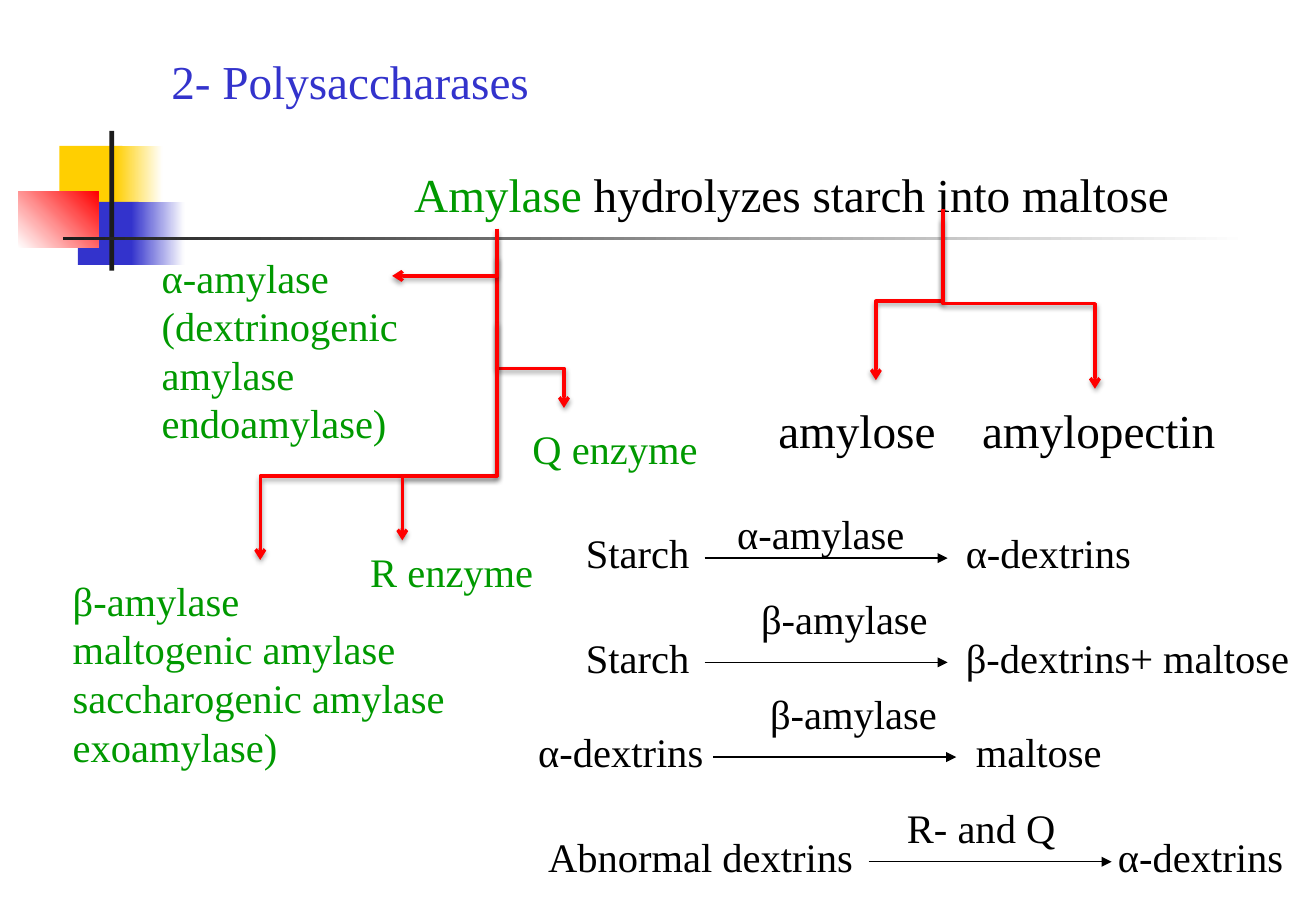
from lxml import etree
from pptx import Presentation
from pptx.dml.color import RGBColor
from pptx.enum.shapes import MSO_CONNECTOR, MSO_SHAPE
from pptx.enum.text import MSO_ANCHOR, MSO_AUTO_SIZE, PP_ALIGN
from pptx.oxml.ns import qn
from pptx.util import Cm, Pt

RECTANGLE = MSO_SHAPE.RECTANGLE
STRAIGHT, ELBOW = MSO_CONNECTOR.STRAIGHT, MSO_CONNECTOR.ELBOW
TOP, LEFT, NO_AUTOFIT = MSO_ANCHOR.TOP, PP_ALIGN.LEFT, MSO_AUTO_SIZE.NONE

FONT = "Times New Roman"
BLACK = RGBColor(0x00, 0x00, 0x00)
WHITE = RGBColor(0xFF, 0xFF, 0xFF)
CHARCOAL = RGBColor(0x1C, 0x1C, 0x1C)
YELLOW = RGBColor(0xFF, 0xCF, 0x01)
BLUE = RGBColor(0x33, 0x33, 0xCC)
RED = RGBColor(0xFF, 0x00, 0x00)
GREEN = RGBColor(0x00, 0x99, 0x00)

# Left, top, width, height in cm, one or two gradient colours, angle
DECORATION = [
    (1.24, 3.05, 1.32, 1.32, [YELLOW], 0),
    (2.41, 3.05, 0.99, 1.32, [YELLOW, WHITE], 0),
    (1.63, 4.22, 1.27, 1.32, [BLUE], 0),
    (2.74, 4.22, 1.12, 1.32, [BLUE, WHITE], 0),
    (0.38, 4.01, 1.68, 1.17, [WHITE, RED], 45),
    (2.29, 2.74, 0.1, 2.92, [CHARCOAL], 0),
    (1.32, 4.95, 24.77, 0.08, [CHARCOAL, WHITE], 0),
]

STEM = 10.39
STARCH = 19.71
# Start, end, height of the bend in cm
BRANCHES = [
    ((STARCH, 4.37), (18.31, 7.95), 6.3),
    ((STARCH, 4.57), (22.89, 8.13), 6.35),
    ((STEM, 4.78), (11.79, 8.53), 7.7),
    ((STEM, 5.36), (5.44, 11.71), 9.96),
    ((STEM, 6.76), (8.41, 11.3), 9.96),
]

# Row top, arrow left, then text and left of substrate and product,
# and text, left and top of the enzyme
REACTIONS = [
    (11.05, 14.73, ("Starch", 12.25), ("α-dextrins", 20.19),
     ("α-amylase", 15.41, 10.64)),
    (13.23, 14.73, ("Starch", 12.25), ("β-dextrins+ maltose", 20.19),
     ("β-amylase", 15.91, 12.42)),
    (15.21, 14.91, ("α-dextrins", 11.25), ("maltose", 20.4),
     ("β-amylase", 16.1, 14.4)),
    (17.4, 18.16, ("Abnormal dextrins", 11.46), ("α-dextrins", 23.37),
     ("R- and Q", 18.96, 16.79)),
]


def write_text(shape, paragraphs, size=24, wrap=True):
    """Each paragraph is a list of (text, colour) runs."""
    frame = shape.text_frame
    frame.word_wrap = wrap
    frame.auto_size = NO_AUTOFIT
    frame.vertical_anchor = TOP
    frame.margin_left = frame.margin_right = Cm(0)
    frame.margin_top = frame.margin_bottom = Cm(0)
    for index, runs in enumerate(paragraphs):
        paragraph = frame.add_paragraph() if index else frame.paragraphs[0]
        paragraph.alignment = LEFT
        paragraph.space_before = Pt(0)
        properties = paragraph._p.get_or_add_pPr()
        properties.set("marL", "0")
        properties.set("indent", "0")
        etree.SubElement(properties, qn("a:buNone"))
        for text, colour in runs:
            run = paragraph.add_run()
            run.text = text
            run.font.name = FONT
            run.font.size = Pt(size)
            run.font.color.rgb = colour


def add_label(slide, text, left, top, colour=BLACK, size=24):
    box = slide.shapes.add_textbox(Cm(left), Cm(top), Cm(4), Cm(1.1))
    write_text(box, [[(text, colour)]], size=size, wrap=False)
    return box


def fill_placeholder(shape, left, top, width, height, paragraphs, size=24):
    shape.left, shape.top = Cm(left), Cm(top)
    shape.width, shape.height = Cm(width), Cm(height)
    write_text(shape, paragraphs, size=size)


def add_block(slide, left, top, width, height, colours, angle):
    block = slide.shapes.add_shape(
        RECTANGLE, Cm(left), Cm(top), Cm(width), Cm(height))
    block.shadow.inherit = False
    block.line.fill.background()
    if len(colours) == 1:
        block.fill.solid()
        block.fill.fore_color.rgb = colours[0]
        return
    block.fill.gradient()
    block.fill.gradient_angle = angle
    for stop, colour in zip(block.fill.gradient_stops, colours):
        stop.color.rgb = colour


def add_arrow(slide, kind, start, end, colour, width, head):
    connector = slide.shapes.add_connector(
        kind, *(Cm(value) for value in (*start, *end)))
    connector.line.color.rgb = colour
    connector.line.width = Pt(width)
    etree.SubElement(connector.line._ln, qn("a:tailEnd"), type=head)
    etree.SubElement(connector._element.spPr, qn("a:effectLst"))
    return connector


def add_red_elbow(slide, start, end, bend):
    """Draw a shadowed elbow that bends at a share of its length."""
    connector = add_arrow(slide, ELBOW, start, end, RED, 2, "arrow")
    properties = connector._element.spPr
    adjustments = properties.find(qn("a:prstGeom")).get_or_add_avLst()
    etree.SubElement(adjustments, qn("a:gd"), name="adj1",
                     fmla=f"val {round(bend * 100000)}")
    shadow = etree.SubElement(
        properties.find(qn("a:effectLst")), qn("a:outerShdw"),
        blurRad=str(Pt(3.1)), dist=str(Pt(1.6)), dir="5400000",
        rotWithShape="0")
    black = etree.SubElement(shadow, qn("a:srgbClr"), val=str(BLACK))
    etree.SubElement(black, qn("a:alpha"), val="38000")
    return connector


def add_branch(slide, start, end, bend_height):
    """Go down, across and down again: an elbow turned by a quarter."""
    (start_x, start_y), (end_x, end_y) = start, end
    length, spread = end_y - start_y, abs(end_x - start_x)
    left = (start_x + end_x - length) / 2
    top = (start_y + end_y - spread) / 2
    ends = [left, left + length]
    to_right = end_x > start_x
    if to_right:
        ends.reverse()
    connector = add_red_elbow(slide, (ends[0], top), (ends[1], top + spread),
                              (bend_height - start_y) / length)
    transform = connector._element.spPr.find(qn("a:xfrm"))
    transform.set("rot", str((270 if to_right else 90) * 60000))


def add_reaction(slide, top, arrow_left, substrate, product, enzyme):
    arrow_y = top + 0.62
    add_arrow(slide, STRAIGHT, (arrow_left, arrow_y),
              (arrow_left + 5.08, arrow_y), BLACK, 0.75, "triangle")
    for text, left in (substrate, product):
        add_label(slide, text, left, top)
    add_label(slide, *enzyme)


def main():
    presentation = Presentation()
    presentation.slide_width, presentation.slide_height = Cm(27.51), Cm(19.05)
    slide = presentation.slides.add_slide(presentation.slide_layouts[3])
    title, alpha_list, beta_list = slide.placeholders

    # Corner decoration and rule
    for block in DECORATION:
        add_block(slide, *block)

    # Title and heading
    fill_placeholder(title, 3.58, 1.1, 20, 1.3,
                     [[("2- Polysaccharases", BLUE)]], size=28)
    heading = slide.shapes.add_textbox(Cm(8.66), Cm(3.45), Cm(17), Cm(1.3))
    write_text(heading, [[("Amylase", GREEN),
                          (" hydrolyzes starch into maltose", BLACK)]], size=28)

    # Starch components
    add_label(slide, "amylose", 16.27, 8.39, size=28)
    add_label(slide, "amylopectin", 20.53, 8.39, size=28)

    # Amylase types
    fill_placeholder(alpha_list, 3.38, 5.28, 5.16, 4.11, [
        [(text, GREEN)] for text in
        ("α-amylase", "(dextrinogenic amylase", "endoamylase)")])
    fill_placeholder(beta_list, 1.52, 12.04, 8, 4.11, [
        [(text, GREEN)] for text in
        ("β-amylase", "maltogenic amylase", "saccharogenic amylase",
         "exoamylase)")])
    add_label(slide, "Q enzyme", 11.13, 8.86, colour=GREEN)
    add_label(slide, "R enzyme", 7.74, 11.43, colour=GREEN)

    # Branching arrows
    for branch in BRANCHES:
        add_branch(slide, *branch)
    add_red_elbow(slide, (STEM, 4.95), (8.2, 5.77), 0)

    # Reactions
    for reaction in REACTIONS:
        add_reaction(slide, *reaction)

    presentation.save("out.pptx")


if __name__ == "__main__":
    main()
